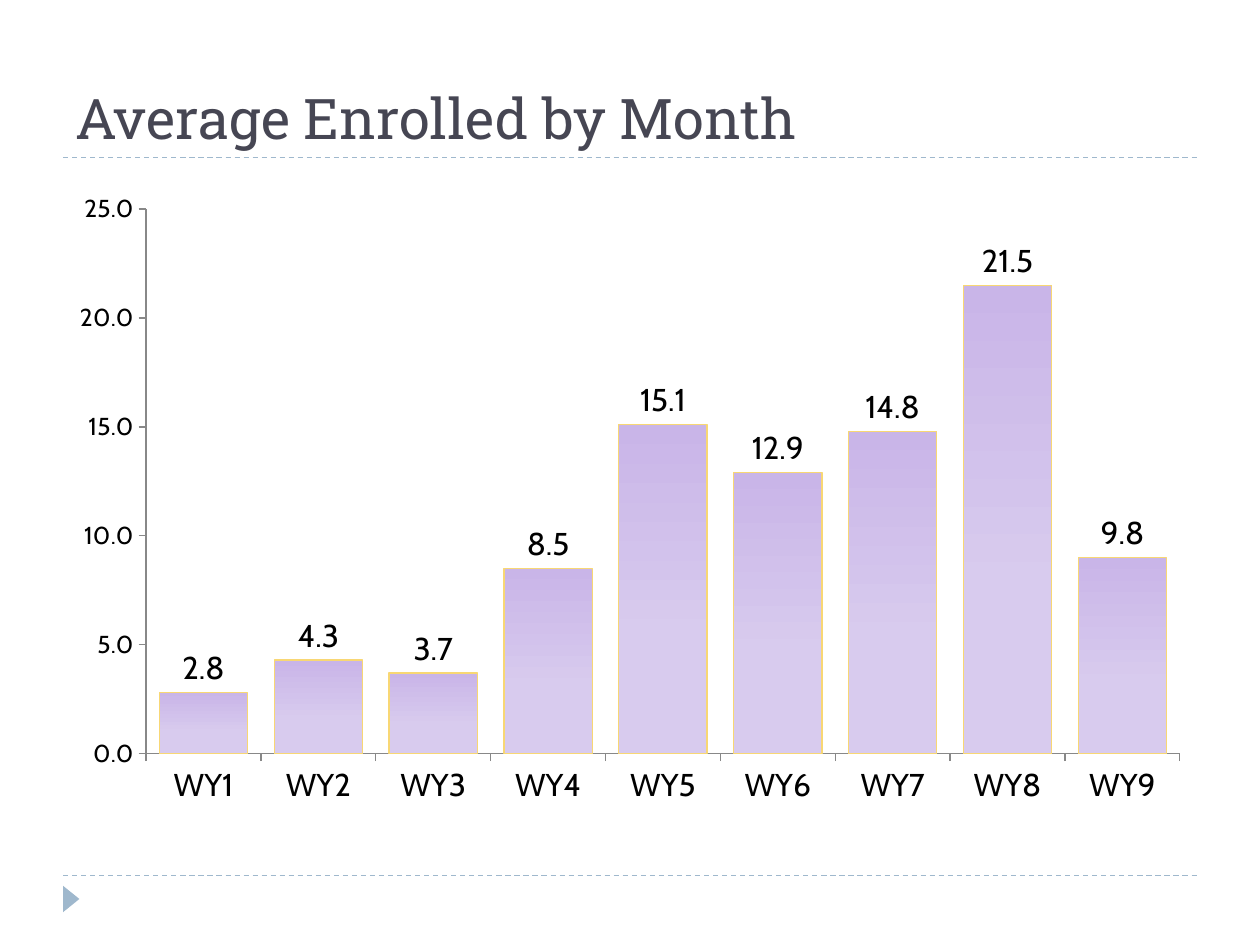
from lxml import etree
from pptx import Presentation
from pptx.chart.data import CategoryChartData
from pptx.dml.color import RGBColor
from pptx.enum.chart import XL_CHART_TYPE, XL_LABEL_POSITION, XL_TICK_MARK
from pptx.enum.dml import MSO_LINE
from pptx.enum.shapes import MSO_CONNECTOR, MSO_SHAPE
from pptx.enum.text import MSO_ANCHOR, PP_ALIGN
from pptx.oxml.ns import qn
from pptx.util import Inches, Pt

COLUMNS = XL_CHART_TYPE.COLUMN_CLUSTERED
ABOVE = XL_LABEL_POSITION.OUTSIDE_END
TICK_OUT = XL_TICK_MARK.OUTSIDE
TICK_NONE = XL_TICK_MARK.NONE
DASH = MSO_LINE.DASH
STRAIGHT = MSO_CONNECTOR.STRAIGHT
TRIANGLE = MSO_SHAPE.ISOSCELES_TRIANGLE
BOTTOM = MSO_ANCHOR.BOTTOM
LEFT = PP_ALIGN.LEFT

HEADING_FONT, BODY_FONT = "Roboto Slab", "Cabin"
ACCENT, AXIS_GREY = "9FB8CD", "888888"
ENROLLED = [2.8, 4.3, 3.7, 8.5, 15.1, 12.9, 14.8, 21.5, 9]
LABEL_OVERRIDES = {8: "9.8"}
PLOT_AREA = {"x": 0.08, "y": 0.06, "w": 0.887, "h": 0.786}


def color(hex_value):
    return RGBColor.from_string(hex_value)


def apply_format(target, values):
    for name, value in values.items():
        setattr(target, name, value)


def format_font(font, size, hex_value="000000", name=BODY_FONT):
    apply_format(font, {"size": Pt(size), "name": name, "bold": False})
    font.color.rgb = color(hex_value)


def add_rule(slide, left, top, width):
    rule = slide.shapes.add_connector(
        STRAIGHT, Inches(left), Inches(top), Inches(left + width), Inches(top))
    apply_format(rule.line, {"width": Pt(0.75), "dash_style": DASH})
    rule.line.color.rgb = color(ACCENT)
    etree.SubElement(rule._element.spPr, qn("a:effectLst"))


def add_frame(slide, left, top, width, height):
    """Dashed rules above and below the content, with the footer marker."""
    for rule_top in (top + height, top):
        add_rule(slide, left, rule_top, width)
    marker = slide.shapes.add_shape(
        TRIANGLE, Inches(left - 0.04), Inches(top + height + 0.12),
        Inches(0.21), Inches(0.13))
    marker.rotation = 90
    marker.shadow.inherit = False
    marker.fill.solid()
    marker.fill.fore_color.rgb = color(ACCENT)
    marker.line.fill.background()


def place_title(slide, text, left, top, width, height):
    title = slide.shapes.title
    apply_format(title, {"left": Inches(left), "top": Inches(top),
                         "width": Inches(width), "height": Inches(height)})
    title.text_frame.text = text
    title.text_frame.vertical_anchor = BOTTOM
    heading = title.text_frame.paragraphs[0]
    heading.alignment = LEFT
    format_font(heading.runs[0].font, 32, "464653", HEADING_FONT)


def fix_plot_area(chart):
    """Set the inner plot area as fractions of the chart."""
    plot_area = chart._chartSpace.chart.plotArea
    for old_layout in plot_area.findall(qn("c:layout")):
        plot_area.remove(old_layout)
    layout = etree.Element(qn("c:layout"))
    manual = etree.SubElement(layout, qn("c:manualLayout"))
    settings = {"layoutTarget": "inner", "xMode": "edge", "yMode": "edge", **PLOT_AREA}
    for tag, value in settings.items():
        etree.SubElement(manual, qn(f"c:{tag}")).set("val", str(value))
    plot_area.insert(0, layout)


def format_axes(chart):
    for axis, size in ((chart.category_axis, 18), (chart.value_axis, 14)):
        apply_format(axis, {"major_tick_mark": TICK_OUT, "minor_tick_mark": TICK_NONE,
                            "has_major_gridlines": False})
        axis.format.line.color.rgb = color(AXIS_GREY)
        axis.format.line.width = Pt(0.75)
        format_font(axis.tick_labels.font, size)
    apply_format(chart.value_axis, {"minimum_scale": 0, "maximum_scale": 25, "major_unit": 5})
    apply_format(chart.value_axis.tick_labels,
                 {"number_format": "0.0", "number_format_is_linked": False})


def format_bars(series):
    bars = series.format
    bars.fill.gradient()
    bars.fill.gradient_angle = 90
    for stop, (position, hex_value) in zip(bars.fill.gradient_stops,
                                           ((0.35, "D8CBEE"), (1, "C9B5E8"))):
        stop.position = position
        stop.color.rgb = color(hex_value)
    bars.line.color.rgb = color("F8D774")
    bars.line.width = Pt(0.75)


def format_labels(series):
    labels = series.data_labels
    apply_format(labels, {"show_value": True, "position": ABOVE,
                          "number_format": "0.0", "number_format_is_linked": False})
    format_font(labels.font, 18)
    for index, text in LABEL_OVERRIDES.items():
        label = series.points[index].data_label
        label.text_frame.text = text
        format_font(label.text_frame.paragraphs[0].runs[0].font, 18)
        label.position = ABOVE


def add_enrollment_chart(slide, left, top, width, height):
    data = CategoryChartData(number_format="0.0")
    data.categories = [f"WY{number}" for number in range(1, len(ENROLLED) + 1)]
    data.add_series("Series 1", ENROLLED)
    chart = slide.shapes.add_chart(
        COLUMNS, Inches(left), Inches(top), Inches(width), Inches(height), data).chart
    apply_format(chart, {"has_legend": False, "has_title": False})
    format_font(chart.font, 10)
    plot = chart.plots[0]
    apply_format(plot, {"gap_width": 30, "vary_by_categories": False})
    fix_plot_area(chart)
    format_axes(chart)
    format_bars(plot.series[0])
    format_labels(plot.series[0])


def main():
    deck = Presentation()
    deck.slide_width, deck.slide_height = Inches(10), Inches(7.5)
    slide = deck.slides.add_slide(deck.slide_layouts[5])
    add_frame(slide, 0.5, 1.25, 9, 5.7)
    place_title(slide, "Average Enrolled by Month", 0.5, 0.17, 9, 1.08)
    add_enrollment_chart(slide, 0.42, 1.33, 9.25, 5.5)
    deck.save("out.pptx")


if __name__ == "__main__":
    main()
